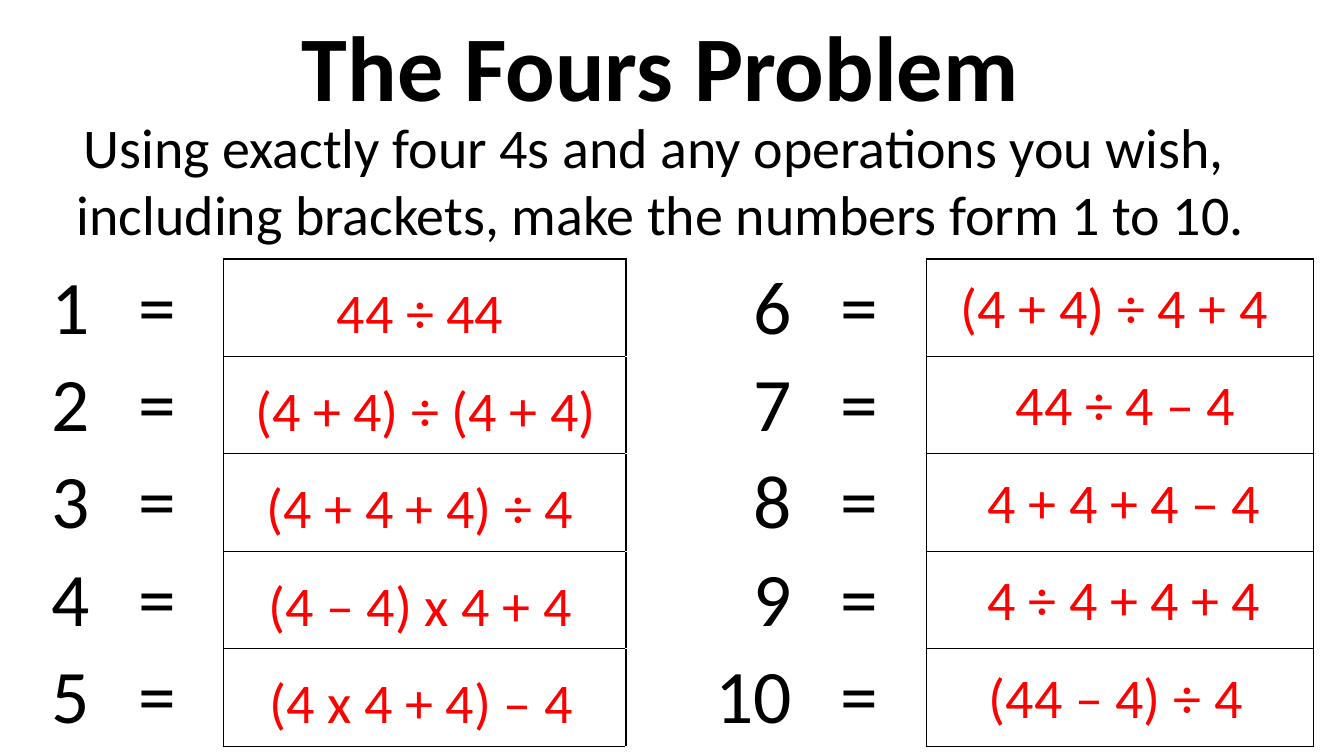
import pptx
import pptx.dml.color
import pptx.enum.text
import pptx.oxml
import pptx.oxml.ns
import pptx.util

Pt = pptx.util.Pt
PP_ALIGN = pptx.enum.text.PP_ALIGN
MSO_ANCHOR = pptx.enum.text.MSO_ANCHOR
BLACK = pptx.dml.color.RGBColor(0x00, 0x00, 0x00)
WHITE = pptx.dml.color.RGBColor(0xFF, 0xFF, 0xFF)
RED = pptx.dml.color.RGBColor(0xFF, 0x00, 0x00)

COLUMNS = [60.5, 95, 287.3, 24.5, 95, 95, 276.5]
ROW_HEIGHT = 69.6
ROWS = 5
ANSWER_COLUMNS = (2, 6)
BORDERS = {1: "R", 2: "LRTB", 3: "L", 5: "R", 6: "LRTB"}
LEFT_ANSWERS = [
    ("44 ÷ 44", 300),
    ("(4 + 4) ÷ (4 + 4)", 304),
    ("(4 + 4 + 4) ÷ 4", 300),
    ("(4 – 4) x 4 + 4", 300),
    ("(4 x 4 + 4) – 4", 301),
]
RIGHT_ANSWERS = [
    ("(4 + 4) ÷ 4 + 4", 796),
    ("44 ÷ 4 – 4", 804),
    ("4 + 4 + 4 – 4", 803),
    ("4 ÷ 4 + 4 + 4", 803),
    ("(44 – 4) ÷ 4", 797),
]


def write(tf, *lines, size=40, color=BLACK, bold=False, align=PP_ALIGN.CENTER):
    """Fill a text frame with one paragraph per line."""
    for i, line in enumerate(lines):
        p = tf.add_paragraph() if i else tf.paragraphs[0]
        p.alignment = align
        r = p.add_run()
        r.text = line
        r.font.name = "Calibri"
        r.font.size = Pt(size)
        r.font.bold = bold
        r.font.color.rgb = color


def add_text(slide, left, top, width, height, *lines, wrap=True, **style):
    """Add a text box holding the given lines."""
    tf = slide.shapes.add_textbox(Pt(left), Pt(top), Pt(width), Pt(height)).text_frame
    tf.word_wrap = wrap
    write(tf, *lines, **style)


def add_heading(slide, left, top, width):
    """Place the title and the task below it."""
    add_text(slide, left, top, width, 87, "The Fours Problem",
             wrap=False, size=66, bold=True)
    add_text(slide, left, top + 74, width, 104.4,
             "Using exactly four 4s and any operations you wish, ",
             "including brackets, make the numbers form 1 to 10.")


def set_borders(cell, sides):
    """Draw thin black lines on the named sides of a cell."""
    tcPr = cell._tc.get_or_add_tcPr()
    for i, side in enumerate(sides):
        tcPr.insert(i, pptx.oxml.parse_xml(
            f'<a:ln{side} {pptx.oxml.ns.nsdecls("a")} w="{Pt(1)}">'
            f'<a:solidFill><a:srgbClr val="{BLACK}"/></a:solidFill></a:ln{side}>'))


def add_number_table(slide, left, top):
    """Place the table of numbers, equals signs and empty answer cells."""
    table = slide.shapes.add_table(ROWS, len(COLUMNS), Pt(left), Pt(top),
                                   Pt(sum(COLUMNS)), Pt(ROWS * ROW_HEIGHT)).table
    table.first_row = table.horz_banding = False
    for column, width in zip(table.columns, COLUMNS):
        column.width = Pt(width)
    for row in range(ROWS):
        table.rows[row].height = Pt(ROW_HEIGHT)
        texts = {0: str(row + 1), 1: "=", 4: str(row + 1 + ROWS), 5: "="}
        for col in range(len(COLUMNS)):
            cell = table.cell(row, col)
            cell.fill.solid()
            cell.fill.fore_color.rgb = WHITE
            cell.vertical_anchor = MSO_ANCHOR.MIDDLE
            cell.margin_left = cell.margin_right = cell.margin_top = Pt(0.75)
            cell.margin_bottom = 0
            set_borders(cell, BORDERS.get(col, ""))
            if col in texts:
                align = PP_ALIGN.CENTER if texts[col] == "=" else PP_ALIGN.RIGHT
                write(cell.text_frame, texts[col], size=54, align=align)


def add_answers(slide, answers, top, width):
    """Place a column of answers, each about its own centre."""
    for row, (answer, center) in enumerate(answers):
        add_text(slide, center - width / 2, top + row * ROW_HEIGHT, width, 55.7,
                 answer, color=RED)


def main():
    """Build the slide and save it."""
    prs = pptx.Presentation()
    prs.slide_width, prs.slide_height = Pt(960), Pt(540)
    slide = prs.slides.add_slide(prs.slide_layouts[6])
    add_heading(slide, 42.5, 3, 858.5)
    add_number_table(slide, 4.3, 185)
    add_answers(slide, LEFT_ANSWERS, 195, 260)
    add_answers(slide, RIGHT_ANSWERS, 191, 260)
    prs.save("out.pptx")


if __name__ == "__main__":
    main()
